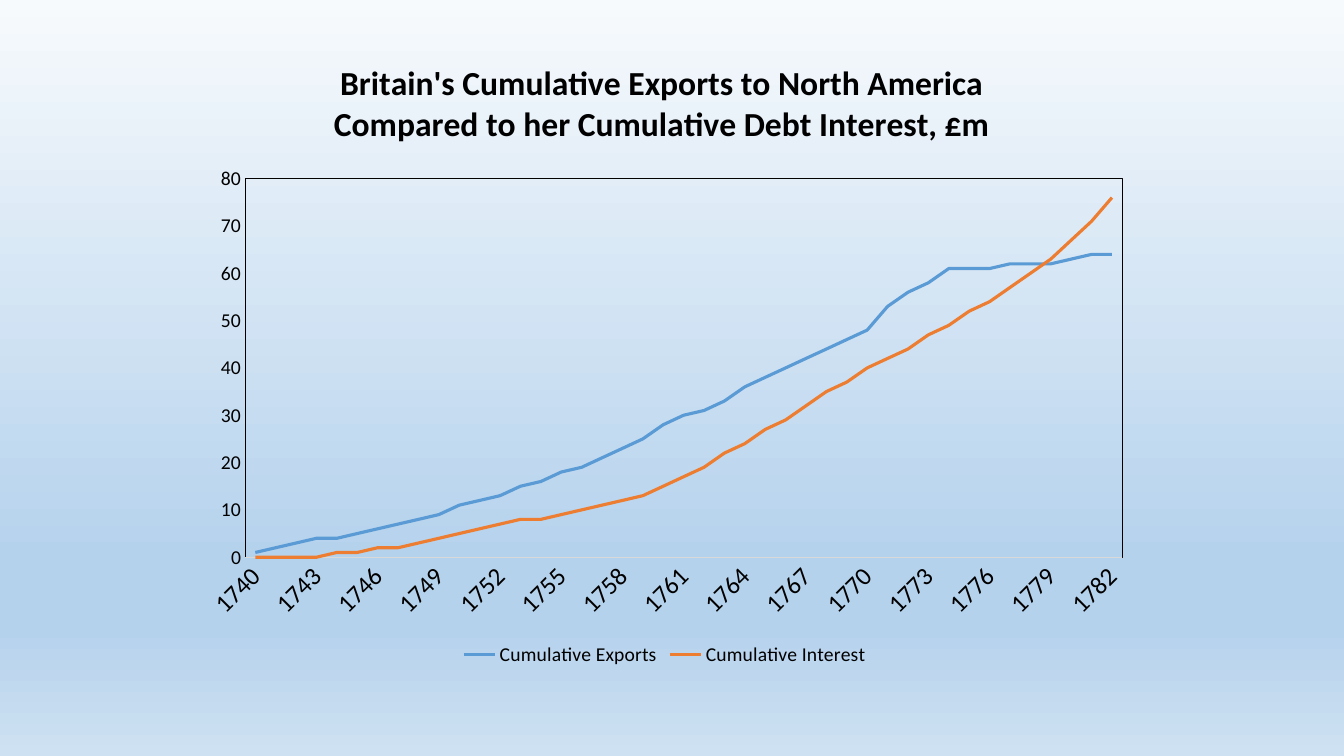
from pptx import Presentation
from pptx.chart.data import CategoryChartData
from pptx.dml.color import RGBColor
from pptx.enum.chart import XL_CHART_TYPE as ChartType, XL_LEGEND_POSITION as LegendPos
from pptx.enum.chart import XL_TICK_MARK as TickMark
from pptx.oxml import parse_xml
from pptx.oxml.ns import nsdecls, qn
from pptx.util import Emu, Pt

PX = 9525  # EMU per px, 96 px to the inch
THEME = {
    "font": "Calibri",
    "text": RGBColor(0, 0, 0),
    "axis": RGBColor.from_string("D9D9D9"),
    "series": ["5B9BD5", "ED7D31"],
    "sky": [(0, "F7FAFD"), (74, "B5D2EC"), (83, "B5D2EC"), (100, "CEE1F2")],
    "title_size": Pt(24),
    "year_size": Pt(18),
    "label_size": Pt(14),
    "series_width": Pt(2.25),
    "axis_width": Pt(0.75),
}
TITLE = ["Britain's Cumulative Exports to North America",
         "Compared to her Cumulative Debt Interest, £m"]
YEARS = range(1740, 1783)
EXPORTS = [1, 2, 3, 4, 4, 5, 6, 7, 8, 9, 11, 12, 13, 15, 16, 18, 19, 21, 23, 25, 28, 30,
           31, 33, 36, 38, 40, 42, 44, 46, 48, 53, 56, 58, 61, 61, 61, 62, 62, 62, 63, 64, 64]
INTEREST = [0, 0, 0, 0, 1, 1, 2, 2, 3, 4, 5, 6, 7, 8, 8, 9, 10, 11, 12, 13, 15, 17,
            19, 22, 24, 27, 29, 32, 35, 37, 40, 42, 44, 47, 49, 52, 54, 57, 60, 63, 67, 71, 76]


def style_font(font, size, bold=False):
    font.name, font.size, font.bold = THEME["font"], size, bold
    font.color.rgb = THEME["text"]


def place(parent, index, **fractions):
    """Fix a chart part at fractions of the chart's width and height."""
    for old in parent.findall(qn("c:layout")):
        parent.remove(old)
    modes = '<c:layoutTarget val="inner"/>' if "w" in fractions else ""
    modes += '<c:xMode val="edge"/><c:yMode val="edge"/>'
    sizes = "".join(f'<c:{k} val="{v}"/>' for k, v in fractions.items())
    parent.insert(index, parse_xml(
        f'<c:layout {nsdecls("c")}><c:manualLayout>{modes}{sizes}</c:manualLayout></c:layout>'))


prs = Presentation()
prs.slide_width, prs.slide_height = Emu(1280 * PX), Emu(720 * PX)
s = prs.slides.add_slide(prs.slide_layouts[6])

# Background
fill = s.background.fill
fill.gradient()
fill.gradient_angle = 270
stops = s._element.find(".//" + qn("a:gsLst"))
for old in list(stops):
    stops.remove(old)
for percent, color in THEME["sky"]:
    stops.append(parse_xml(f'<a:gs {nsdecls("a")} pos="{percent * 1000}">'
                           f'<a:srgbClr val="{color}"/></a:gs>'))

# Chart
data = CategoryChartData()
data.categories = [str(year) for year in YEARS]
data.add_series("Cumulative Exports", EXPORTS)
data.add_series("Cumulative Interest", INTEREST)
box = [Emu(n * PX) for n in (179, 38, 908, 601)]
chart = s.shapes.add_chart(ChartType.LINE, *box, data).chart
style_font(chart.font, THEME["label_size"])

for series, color in zip(chart.plots[0].series, THEME["series"]):
    series.smooth = False
    series.format.line.color.rgb = RGBColor.from_string(color)
    series.format.line.width = THEME["series_width"]

# Title
tf = chart.chart_title.text_frame
tf.text = "\n".join(TITLE)
for p in tf.paragraphs:
    style_font(p.runs[0].font, THEME["title_size"], bold=True)
chart.chart_title.include_in_layout = False
place(chart.chart_title._element, 1, x=0.15, y=0.03)

# Axes
years, millions = chart.category_axis, chart.value_axis
for axis, size in ((years, THEME["year_size"]), (millions, THEME["label_size"])):
    axis.major_tick_mark = axis.minor_tick_mark = TickMark.NONE
    axis.has_major_gridlines = False
    style_font(axis.tick_labels.font, size)
years.format.line.color.rgb = THEME["axis"]
years.format.line.width = THEME["axis_width"]
years._element.find(".//" + qn("a:bodyPr")).set("rot", "-2700000")
years._element.find(qn("c:noMultiLvlLbl")).addprevious(
    parse_xml(f'<c:tickLblSkip {nsdecls("c")} val="3"/>'))
millions.format.line.fill.background()
millions.minimum_scale, millions.maximum_scale, millions.major_unit = 0, 80, 10

# Plot frame
plot_area = chart._chartSpace.chart.plotArea
place(plot_area, 0, x=0.06, y=0.22, w=0.92, h=0.6)
plot_area.append(parse_xml(
    f'<c:spPr {nsdecls("c", "a")}><a:noFill/><a:ln w="{THEME["axis_width"]}"><a:solidFill>'
    f'<a:srgbClr val="{THEME["text"]}"/></a:solidFill></a:ln></c:spPr>'))

# Legend
chart.has_legend = True
chart.legend.position = LegendPos.BOTTOM
chart.legend.include_in_layout = False
style_font(chart.legend.font, THEME["label_size"])

prs.save("out.pptx")
